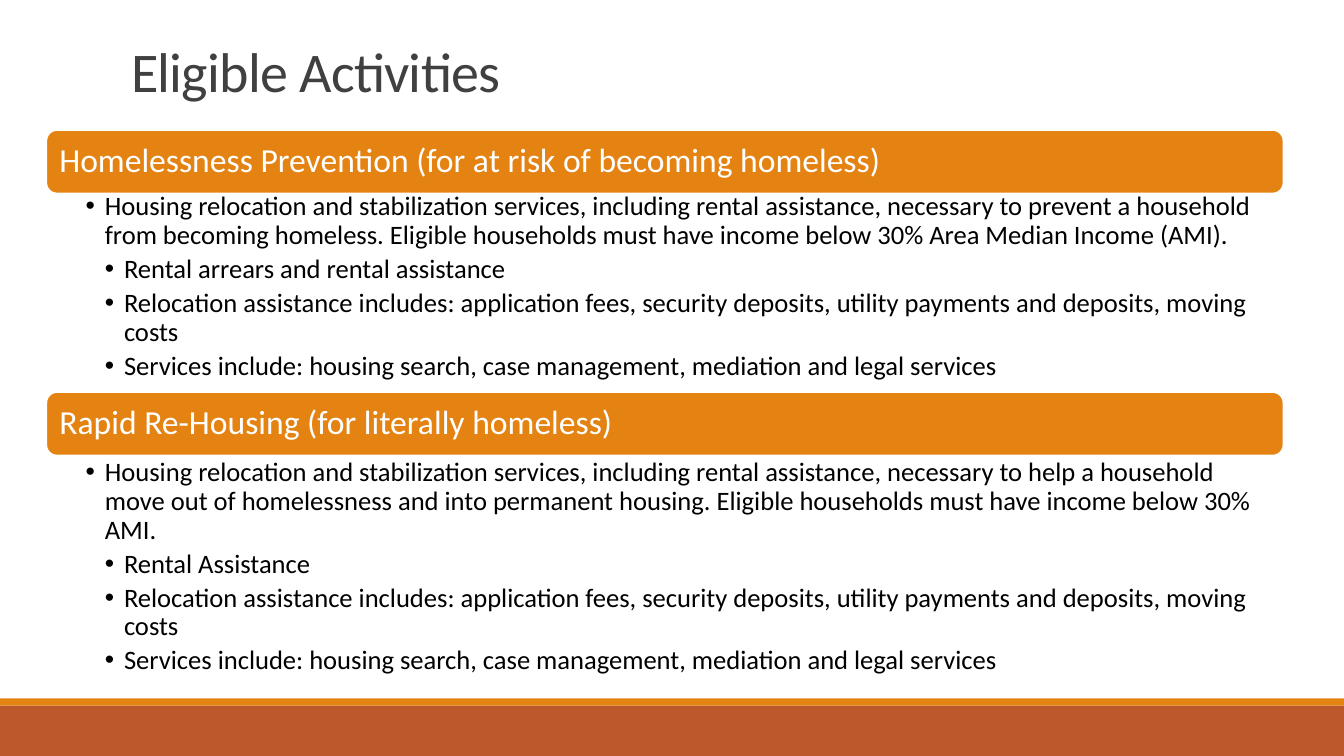
"""Build the Eligible Activities slide with two headed bullet lists."""
from dataclasses import dataclass

from lxml import etree
from pptx import Presentation
from pptx.dml.color import RGBColor
from pptx.enum.shapes import MSO_SHAPE
from pptx.enum.text import MSO_ANCHOR, MSO_AUTO_SIZE, PP_ALIGN
from pptx.oxml.ns import qn
from pptx.util import Inches, Pt

RECTANGLE, ROUNDED = MSO_SHAPE.RECTANGLE, MSO_SHAPE.ROUNDED_RECTANGLE
TOP, MIDDLE, BOTTOM = MSO_ANCHOR.TOP, MSO_ANCHOR.MIDDLE, MSO_ANCHOR.BOTTOM
LEFT = PP_ALIGN.LEFT
NO_FIT = MSO_AUTO_SIZE.NONE
TWO_CONTENT = 3

TITLE = "Eligible Activities"
RELOCATION = ("Relocation assistance includes: application fees, security deposits, "
              "utility payments and deposits, moving costs")
SERVICES = "Services include: housing search, case management, mediation and legal services"
SECTIONS = [
    {"heading": "Homelessness Prevention (for at risk of becoming homeless)",
     "top": 1.29, "list_top": 1.88, "list_height": 2.01,
     "summary": "Housing relocation and stabilization services, including rental assistance, "
                "necessary to prevent a household from becoming homeless. Eligible households "
                "must have income below 30% Area Median Income (AMI).",
     "details": ["Rental arrears and rental assistance", RELOCATION, SERVICES]},
    {"heading": "Rapid Re-Housing (for literally homeless)",
     "top": 3.89, "list_top": 4.52, "list_height": 2.34,
     "summary": "Housing relocation and stabilization services, including rental assistance, "
                "necessary to help a household move out of homelessness and into permanent "
                "housing. Eligible households must have income below 30% AMI.",
     "details": ["Rental Assistance", RELOCATION, SERVICES]},
]
SECTION_LEFT, SECTION_WIDTH, BANNER_HEIGHT = 0.46, 12.27, 0.63
BULLET_STEP = 0.19
SLIDE_WIDTH, SLIDE_HEIGHT = 13.33, 7.5


@dataclass(frozen=True)
class Theme:
    """Colours and type of the slide."""
    font: str = "Calibri"
    orange: str = "E48312"
    rust: str = "BD582C"
    white: str = "FFFFFF"
    black: str = "000000"
    grey: str = "404040"
    title_size: int = 40
    heading_size: int = 24
    list_size: int = 19


THEME = Theme()


def place(shape, left, top, width, height):
    """Move and size a shape, in inches."""
    shape.left, shape.top = Inches(left), Inches(top)
    shape.width, shape.height = Inches(width), Inches(height)


def set_frame(shape, anchor, insets):
    """Set wrapping, anchor and insets, and return the text frame."""
    frame = shape.text_frame
    frame.word_wrap, frame.auto_size, frame.vertical_anchor = True, NO_FIT, anchor
    (frame.margin_left, frame.margin_top,
     frame.margin_right, frame.margin_bottom) = map(Inches, insets)
    return frame


def write(para, text, *, size, color, line=0.9, after=0, tracking=None, bullet_level=None):
    """Write one formatted paragraph."""
    para.alignment, para.line_spacing = LEFT, line
    para.space_before, para.space_after = Pt(0), Pt(after)
    span = para.add_run()
    span.text = text
    span.font.name, span.font.size = THEME.font, Pt(size)
    span.font.color.rgb = RGBColor.from_string(color)
    if tracking is not None:
        span.font._element.set("spc", str(int(tracking * 100)))
    if bullet_level is not None:
        para.level = bullet_level
        properties = para._p.get_or_add_pPr()
        properties.set("marL", str(Inches(BULLET_STEP * (bullet_level + 1))))
        properties.set("indent", str(-Inches(BULLET_STEP)))
        etree.SubElement(properties, qn("a:buChar")).set("char", "•")


def add_block(page, kind, bounds, fill, line=None):
    """Add a flat filled shape, outlined if a line colour is given."""
    box = page.shapes.add_shape(kind, *map(Inches, bounds))
    box.shadow.inherit = False
    box.fill.solid()
    box.fill.fore_color.rgb = RGBColor.from_string(fill)
    if line:
        box.line.color.rgb = RGBColor.from_string(line)
        box.line.width = Pt(1.25)
    else:
        box.line.fill.background()
    return box


def add_section(page, body, section):
    """Add a heading banner and fill the list below it."""
    banner = add_block(page, ROUNDED,
                       (SECTION_LEFT, section["top"], SECTION_WIDTH, BANNER_HEIGHT),
                       THEME.orange, THEME.white)
    frame = set_frame(banner, MIDDLE, (0.1, 0.1, 0.1, 0.1))
    write(frame.paragraphs[0], section["heading"], size=THEME.heading_size, color=THEME.white)

    place(body, SECTION_LEFT, section["list_top"], SECTION_WIDTH, section["list_height"])
    frame = set_frame(body, TOP, (0.39, 0.03, 0.19, 0.03))
    for index, text in enumerate([section["summary"], *section["details"]]):
        para = frame.add_paragraph() if index else frame.paragraphs[0]
        write(para, text, size=THEME.list_size, color=THEME.black,
              after=THEME.list_size * 0.2, bullet_level=min(index, 1))


def main():
    """Build and save the deck."""
    deck = Presentation()
    deck.slide_width, deck.slide_height = Inches(SLIDE_WIDTH), Inches(SLIDE_HEIGHT)
    page = deck.slides.add_slide(deck.slide_layouts[TWO_CONTENT])
    title, *bodies = page.placeholders

    add_block(page, RECTANGLE, (0, 7, SLIDE_WIDTH, 0.5), THEME.rust)
    add_block(page, RECTANGLE, (0, 6.93, SLIDE_WIDTH, 0.07), THEME.orange)

    place(title, 1.2, 0.31, 11, 0.77)
    frame = set_frame(title, BOTTOM, (0.1, 0.05, 0.1, 0.05))
    write(frame.paragraphs[0], TITLE, size=THEME.title_size, color=THEME.grey,
          line=0.85, tracking=-0.5)

    for body, section in zip(bodies, SECTIONS):
        add_section(page, body, section)
    deck.save("out.pptx")


if __name__ == "__main__":
    main()
